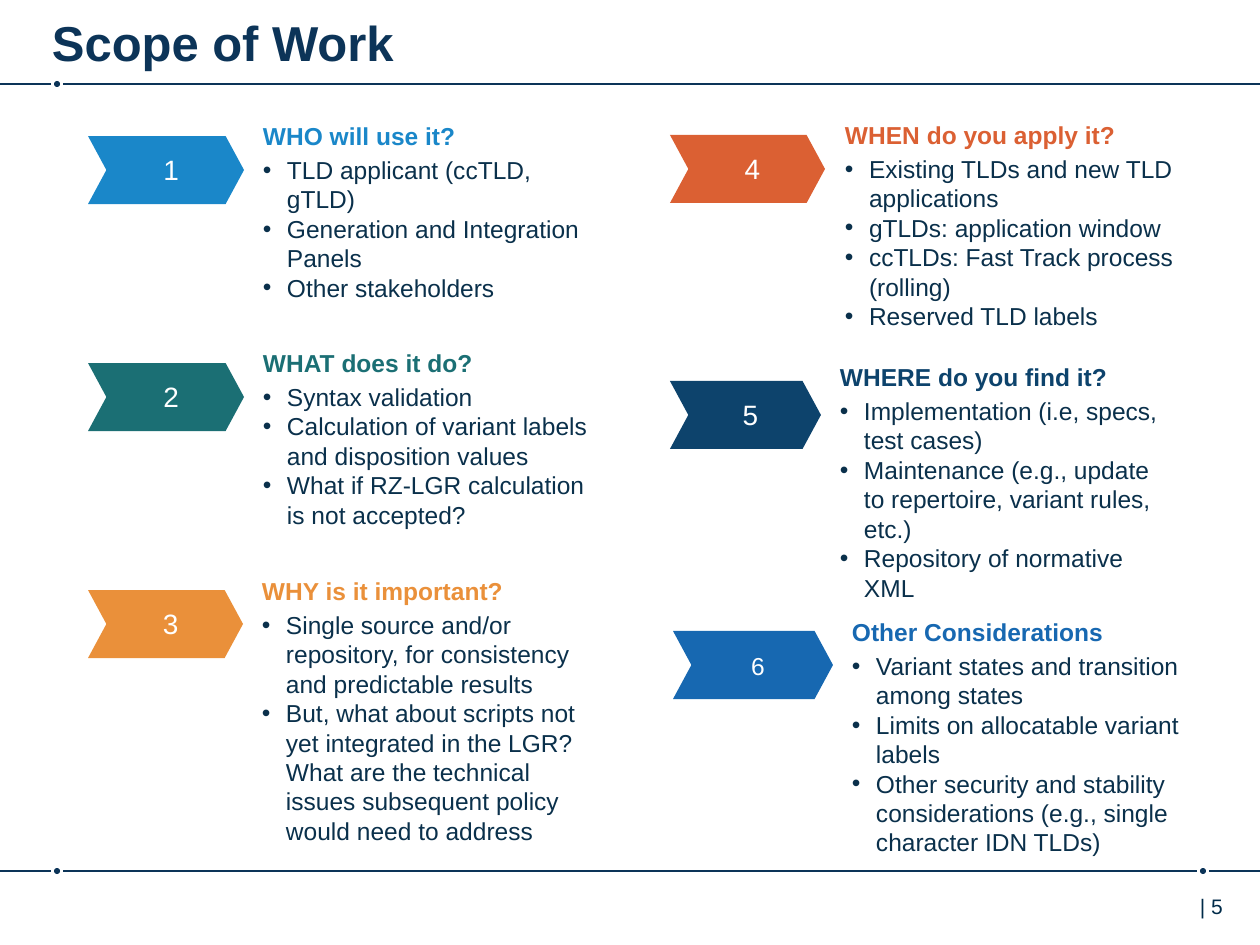
from lxml.etree import SubElement
from pptx import Presentation
from pptx.dml.color import RGBColor
from pptx.enum.shapes import MSO_CONNECTOR, MSO_SHAPE
from pptx.enum.text import MSO_ANCHOR, MSO_AUTO_SIZE, PP_ALIGN
from pptx.oxml.ns import qn
from pptx.util import Emu, Pt

PX = 914400 / 126
FONT = "Arial"
COLORS = {
    "navy": "0C3458", "body": "0A304B", "page": "002B49", "white": "FFFFFF",
    "who": "1A87C9", "what": "1B6F74", "why": "EA903A",
    "when": "DB6033", "where": "0D436C", "other": "1768B1",
}
CHEVRON_H = 68
HEADING_H = 39
BODY_OFFSET = 31
BULLET_INDENT = 24

# color, chevron (x, y, width), number size, text (x, y),
# heading width, body (width, height), heading, bullets
SECTIONS = [
    ("who", (88, 136, 156), 16, (261, 118), 291, (335, 161), "WHO will use it?",
     ["TLD applicant (ccTLD, gTLD)",
      "Generation and Integration Panels",
      "Other stakeholders"]),
    ("what", (88, 363, 156), 16, (261, 345), 316, (335, 161), "WHAT does it do?",
     ["Syntax validation",
      "Calculation of variant labels and disposition values",
      "What if RZ-LGR calculation is not accepted?"]),
    ("why", (88, 590, 155), 16, (260, 573), 368, (333, 251), "WHY is it important?",
     ["Single source and/or repository, for consistency and predictable results",
      "But, what about scripts not yet integrated in the LGR? What are the "
      "technical issues subsequent policy would need to address"]),
    ("when", (670, 135, 155), 16, (843, 117), 362, (345, 190), "WHEN do you apply it?",
     ["Existing TLDs and new TLD applications",
      "gTLDs: application window",
      "ccTLDs: Fast Track process (rolling)",
      "Reserved TLD labels"]),
    ("where", (670, 381, 151), 16, (838, 359), 404, (336, 221), "WHERE do you find it?",
     ["Implementation (i.e, specs, test cases)",
      "Maintenance (e.g., update to repertoire, variant rules, etc.)",
      "Repository of normative XML"]),
    ("other", (673, 631, 160), 14, (850, 614), 357, (357, 221), "Other Considerations",
     ["Variant states and transition among states",
      "Limits on allocatable variant labels",
      "Other security and stability considerations (e.g., single character IDN TLDs)"]),
]


def px(n):
    return Emu(round(n * PX))


def rgb(name):
    return RGBColor.from_string(COLORS[name])


def add_run(p, text, size, color, bold=False):
    r = p.add_run()
    r.text = text
    r.font.name = FONT
    r.font.size = Pt(size)
    r.font.bold = bold
    r.font.color.rgb = rgb(color)


def set_frame(tf, side, top, anchor=MSO_ANCHOR.TOP):
    tf.word_wrap = True
    tf.margin_left = tf.margin_right = px(side)
    tf.margin_top = tf.margin_bottom = px(top)
    tf.vertical_anchor = anchor


def add_shape(shapes, kind, x, y, w, h, color):
    sp = shapes.add_shape(kind, px(x), px(y), px(w), px(h))
    sp.shadow.inherit = False
    sp.fill.solid()
    sp.fill.fore_color.rgb = rgb(color)
    sp.line.fill.background()
    return sp


def add_text_box(shapes, x, y, w, h, anchor=MSO_ANCHOR.TOP):
    sp = shapes.add_textbox(px(x), px(y), px(w), px(h))
    set_frame(sp.text_frame, 2, 6, anchor)
    sp.text_frame.auto_size = MSO_AUTO_SIZE.SHAPE_TO_FIT_TEXT
    return sp.text_frame


def add_rule(slide, y, dots):
    """Draw a full-width rule, broken by a gap around each dot."""
    start = 0
    for x in dots:
        add_line(slide, start, x - 6, y)
        add_shape(slide.shapes, MSO_SHAPE.OVAL, x - 3, y - 3, 6, 6, "navy")
        start = x + 6
    add_line(slide, start, 1260, y)


def add_line(slide, x1, x2, y):
    line = slide.shapes.add_connector(MSO_CONNECTOR.STRAIGHT, px(x1), px(y), px(x2), px(y))
    line.line.color.rgb = rgb("navy")
    line.line.width = Pt(1)
    SubElement(line._element.spPr, qn("a:effectLst"))


def set_indent(p, left, first):
    pPr = p._p.get_or_add_pPr()
    pPr.set("marL", str(px(left)))
    pPr.set("indent", str(px(first)))
    return pPr


def add_bullets(tf, items):
    for i, item in enumerate(items):
        p = tf.add_paragraph() if i else tf.paragraphs[0]
        pPr = set_indent(p, BULLET_INDENT, -BULLET_INDENT)
        SubElement(pPr, qn("a:buFont"), typeface=FONT)
        SubElement(pPr, qn("a:buChar"), char="•")
        add_run(p, item, 14, "body")


def add_chevron(shapes, x, y, w, color, number, size):
    sp = add_shape(shapes, MSO_SHAPE.CHEVRON, x, y, w, CHEVRON_H, color)
    sp.adjustments[0] = 0.27
    set_frame(sp.text_frame, 8, 4, MSO_ANCHOR.MIDDLE)
    p = sp.text_frame.paragraphs[0]
    p.alignment = PP_ALIGN.CENTER
    p.line_spacing = Pt(17.9)
    set_indent(p, 10, 0)
    add_run(p, str(number), size, "white")


def add_section(slide, number, section):
    color, chevron, size, (x, y), heading_w, (w, h), heading, items = section
    shapes = slide.shapes.add_group_shape().shapes
    add_chevron(shapes, *chevron, color, number, size)
    p = add_text_box(shapes, x, y, heading_w, HEADING_H, MSO_ANCHOR.MIDDLE).paragraphs[0]
    p.line_spacing = 0.9
    add_run(p, heading, 14, color, bold=True)
    add_bullets(add_text_box(shapes, x, y + BODY_OFFSET, w, h), items)


def set_title(slide, text):
    sp = slide.shapes.title
    sp.left, sp.top, sp.width, sp.height = px(52), px(6), px(1104), px(62)
    set_frame(sp.text_frame, 0, 6)
    sp.text_frame.auto_size = MSO_AUTO_SIZE.NONE
    p = sp.text_frame.paragraphs[0]
    p.alignment = PP_ALIGN.LEFT
    add_run(p, text, 28, "navy", bold=True)


def add_page_number(slide, text):
    tf = add_text_box(slide.shapes, 1198, 888, 60, 39)
    add_run(tf.paragraphs[0], text, 12, "page")


def main():
    prs = Presentation()
    prs.slide_width, prs.slide_height = px(1260), px(945)
    slide = prs.slides.add_slide(prs.slide_layouts[5])
    set_title(slide, "Scope of Work")
    add_rule(slide, 84, [57])
    add_rule(slide, 871, [57, 1203])
    add_page_number(slide, "| 5")
    for number, section in enumerate(SECTIONS, 1):
        add_section(slide, number, section)
    prs.save("out.pptx")


if __name__ == "__main__":
    main()
